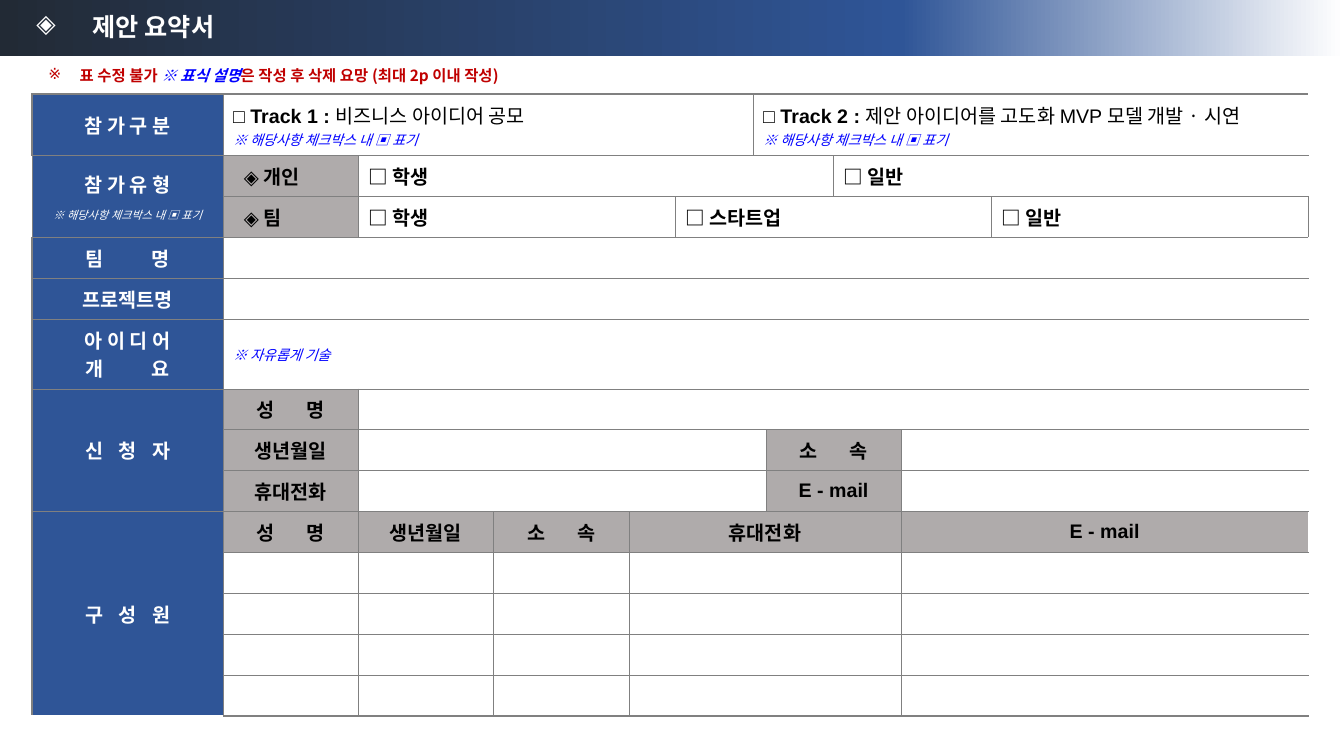
import copy
import dataclasses

import lxml.etree
import pptx
import pptx.dml.color
import pptx.enum.shapes
import pptx.enum.text
import pptx.oxml.ns
import pptx.util

Cm = pptx.util.Cm
Pt = pptx.util.Pt
qn = pptx.oxml.ns.qn
RGBColor = pptx.dml.color.RGBColor
ALIGN = pptx.enum.text.PP_ALIGN
MIDDLE = pptx.enum.text.MSO_ANCHOR.MIDDLE

DARK = RGBColor(0x22, 0x2A, 0x35)
BLUE = RGBColor(0x2F, 0x55, 0x97)
WHITE = RGBColor(0xFF, 0xFF, 0xFF)
BLACK = RGBColor(0, 0, 0)
GRAY = RGBColor(0xAF, 0xAB, 0xAB)
BORDER = RGBColor(0x80, 0x80, 0x80)
RED = RGBColor(0xC0, 0, 0)
HINT_BLUE = RGBColor(0, 0, 0xFF)
ARIAL = "Arial"
KOREAN = "Noto Sans CJK KR"

COLUMNS = [4.81, 3.41, 3.41, 3.41, 1.16, 1.97, 0.33, 1.69, 1.71, 2.27, 7.99]
ROWS = [1.55] + [1.03] * 4 + [1.76] + [1.03] * 8
MEMBER_ROWS = range(10, 14)
THIN, MEDIUM, THICK = 0.5, 1, 1.5


@dataclasses.dataclass(frozen=True)
class Style:
    size: float = 14
    color: RGBColor = BLACK
    bold: bool = True
    italic: bool = False
    font: str = ARIAL
    spacing: float = 0


HEADING = Style()
LABEL = Style(color=WHITE)
PLAIN = Style(bold=False)
HINT = Style(10, HINT_BLUE, bold=False, italic=True)
LABEL_HINT = dataclasses.replace(HINT, size=8, color=WHITE)
NOTICE = Style(11, RED, font=KOREAN)


def korean(style):
    return dataclasses.replace(style, font=KOREAN)


def spread(text, style, spacing):
    """Runs whose letters stand apart, without space after the last letter."""
    return [(text[:-1], dataclasses.replace(style, spacing=spacing)), (text[-1], style)]


def check_hint(style):
    return [("※ 해당사항 ", korean(style)), ("체크박스 내 ▣ 표기", style)]


def format_run(run, style):
    font = run.font
    font.name, font.size = style.font, Pt(style.size)
    font.bold, font.italic = style.bold, style.italic
    font.color.rgb = style.color
    properties = run._r.get_or_add_rPr()
    east_asian = lxml.etree.Element(qn("a:ea"), typeface=KOREAN)
    properties.find(qn("a:latin")).addnext(east_asian)
    if style.spacing:
        properties.set("spc", str(round(style.spacing * 100)))


def write_runs(paragraph, runs):
    for text, style in runs:
        run = paragraph.add_run()
        run.text = text
        format_run(run, style)


def indent(paragraph, margin, hanging=0, bullet=None):
    properties = paragraph._p.get_or_add_pPr()
    properties.set("marL", str(Cm(margin)))
    properties.set("indent", str(-Cm(hanging)))
    if bullet:
        lxml.etree.SubElement(properties, qn("a:buChar"), char=bullet)


def add_band(slide, width):
    band = slide.shapes.add_shape(
        pptx.enum.shapes.MSO_SHAPE.RECTANGLE, 0, 0, width, Cm(1.41))
    band.shadow.inherit = False
    band.line.fill.background()
    band.fill.gradient()
    band.fill.gradient_angle = 0
    stop_list = band._element.spPr.find(".//" + qn("a:gsLst"))
    stop_list.append(copy.deepcopy(stop_list[-1]))
    stops = [(0, DARK), (0.67, BLUE), (1, WHITE)]
    for stop, (position, color) in zip(band.fill.gradient_stops, stops):
        stop.position = position
        stop.color.rgb = color
    slide.shapes._spTree.insert(2, band._element)


def format_title(title):
    title.left, title.top, title.width, title.height = Cm(0.66), Cm(0.03), Cm(32.08), Cm(1.35)
    title.text_frame.text = "제안 요약서"
    title.text_frame.vertical_anchor = MIDDLE
    paragraph = title.text_frame.paragraphs[0]
    paragraph.alignment = ALIGN.LEFT
    paragraph.line_spacing = 0.9
    indent(paragraph, 1.42, 1.42, "◈")
    format_run(paragraph.runs[0], Style(18, WHITE))


def add_notice(slide):
    frame = slide.shapes.add_textbox(Cm(0.97), Cm(1.55), Cm(31.39), Cm(0.74)).text_frame
    frame.word_wrap = True
    paragraph = frame.paragraphs[0]
    indent(paragraph, 0.79, 0.79, "※")
    write_runs(paragraph, [
        ("표 수정 불가 ", NOTICE),
        ("※ 표식 설명", dataclasses.replace(NOTICE, color=HINT_BLUE, italic=True)),
        ("은 작성 후 삭제 요망 (최대 2p 이내 작성)", NOTICE)])


def edge_weights(row, column):
    """Border weights of a grid position: heavy frame, lighter around the type rows."""
    type_row = row in (1, 2)
    label = column == 0
    left = (MEDIUM if type_row else THICK) if label else THIN
    right = THICK if column == len(COLUMNS) - 1 and not type_row else THIN
    top = THICK if row == 0 else MEDIUM if label and row in (1, 3) else THIN
    bottom = THICK if row == len(ROWS) - 1 else MEDIUM if label and row in (0, 2) else THIN
    return left, right, top, bottom


def draw_borders(cell, weights, on_edge):
    properties = cell._tc.get_or_add_tcPr()
    for side, weight, visible in zip("LRTB", weights, on_edge):
        if visible:
            line = lxml.etree.SubElement(properties, qn("a:ln" + side), w=str(Pt(weight)))
            fill = lxml.etree.SubElement(line, qn("a:solidFill"))
            lxml.etree.SubElement(fill, qn("a:srgbClr"), val=str(BORDER))


def fill_cell(table, row, column, paragraphs=(), across=1, down=1,
              fill=WHITE, align=ALIGN.LEFT, margin=0, gap=0):
    """Merge, frame and write one field of the form; gap is the space between paragraphs."""
    last_row, last_column = row + down - 1, column + across - 1
    origin = table.cell(row, column)
    if across * down > 1:
        origin.merge(table.cell(last_row, last_column))
    for r in range(row, last_row + 1):
        for c in range(column, last_column + 1):
            cell = table.cell(r, c)
            draw_borders(cell, edge_weights(r, c),
                         (c == column, c == last_column, r == row, r == last_row))
            cell.fill.solid()
            cell.fill.fore_color.rgb = fill
    origin.vertical_anchor = MIDDLE
    for index, runs in enumerate(paragraphs):
        frame = origin.text_frame
        paragraph = frame.add_paragraph() if index else frame.paragraphs[0]
        paragraph.alignment = align
        if index and gap:
            paragraph.space_before = Pt(gap)
        if margin:
            indent(paragraph, margin)
        write_runs(paragraph, runs)


def add_form(slide):
    table = slide.shapes.add_table(
        len(ROWS), len(COLUMNS), Cm(0.81), Cm(2.37), Cm(sum(COLUMNS)), Cm(sum(ROWS))).table
    table.first_row = table.horz_banding = False
    for column, width in zip(table.columns, COLUMNS):
        column.width = Cm(width)
    for row, height in zip(table.rows, ROWS):
        row.height = Cm(height)

    labels = [
        (0, 1, [[("참 가 구 분", LABEL)]]),
        (1, 2, [[("참 가 유 형", LABEL)], check_hint(LABEL_HINT)]),
        (3, 1, [spread("팀 명", LABEL, 15.5)]),
        (4, 1, [[("프로젝트명", LABEL)]]),
        (5, 1, [[("아 이 디 어", LABEL)], spread("개 요", LABEL, 15.5)]),
        (6, 3, [spread("신 청 자", LABEL, 3.9)]),
        (9, 5, [spread("구 성 원", LABEL, 3.9)])]
    for row, down, paragraphs in labels:
        fill_cell(table, row, 0, paragraphs, down=down, fill=BLUE, align=ALIGN.CENTER,
                  gap=6 if row == 1 else 0)

    tracks = [
        (1, [("□ Track 1 : ", HEADING), ("비즈니스 아이디어 공모", PLAIN)]),
        (6, [("□ Track 2 : ", HEADING), ("제안 아이디어를 고도화 MVP 모델 개발 ", PLAIN),
             ("· ", korean(PLAIN)), ("시연", PLAIN)])]
    for column, runs in tracks:
        fill_cell(table, 0, column, [runs, check_hint(HINT)], across=5, align=ALIGN.JUSTIFY)

    for row, kind in [(1, "◈ 개인"), (2, "◈ 팀")]:
        fill_cell(table, row, 1, [[(kind, HEADING)]], fill=GRAY, margin=0.27)
    choices = [(1, 2, 6, "□ 학생"), (1, 8, 3, "□ 일반"),
               (2, 2, 3, "□ 학생"), (2, 5, 5, "□ 스타트업"), (2, 10, 1, "□ 일반")]
    for row, column, across, choice in choices:
        fill_cell(table, row, column, [[(choice, HEADING)]], across)

    name = spread("성 명", HEADING, 9.7)
    affiliation = spread("소 속", HEADING, 9.7)
    birth, phone, email = ([(text, HEADING)] for text in ("생년월일", "휴대전화", "E - mail"))
    headings = [(6, 1, 1, name), (7, 1, 1, birth), (7, 7, 2, affiliation),
                (8, 1, 1, phone), (8, 7, 2, email),
                (9, 1, 1, name), (9, 2, 1, birth), (9, 3, 1, affiliation),
                (9, 4, 5, phone), (9, 9, 2, email)]
    for row, column, across, runs in headings:
        fill_cell(table, row, column, [runs], across, fill=GRAY, align=ALIGN.CENTER)

    fill_cell(table, 5, 1, [[("※ ", korean(HINT)), ("자유롭게 기술", HINT)]], 10,
              align=ALIGN.JUSTIFY)
    blanks = [(3, 1, 10), (4, 1, 10), (6, 2, 9)]
    blanks += [(row, column, across) for row in (7, 8) for column, across in [(2, 5), (9, 2)]]
    blanks += [(row, column, across) for row in MEMBER_ROWS
               for column, across in [(1, 1), (2, 1), (3, 1), (4, 5), (9, 2)]]
    for row, column, across in blanks:
        fill_cell(table, row, column, across=across)


def main():
    deck = pptx.Presentation()
    deck.slide_width, deck.slide_height = Cm(33.87), Cm(19.05)
    slide = deck.slides.add_slide(deck.slide_layouts[5])
    add_band(slide, deck.slide_width)
    format_title(slide.shapes.title)
    add_notice(slide)
    add_form(slide)
    deck.save("out.pptx")


if __name__ == "__main__":
    main()
